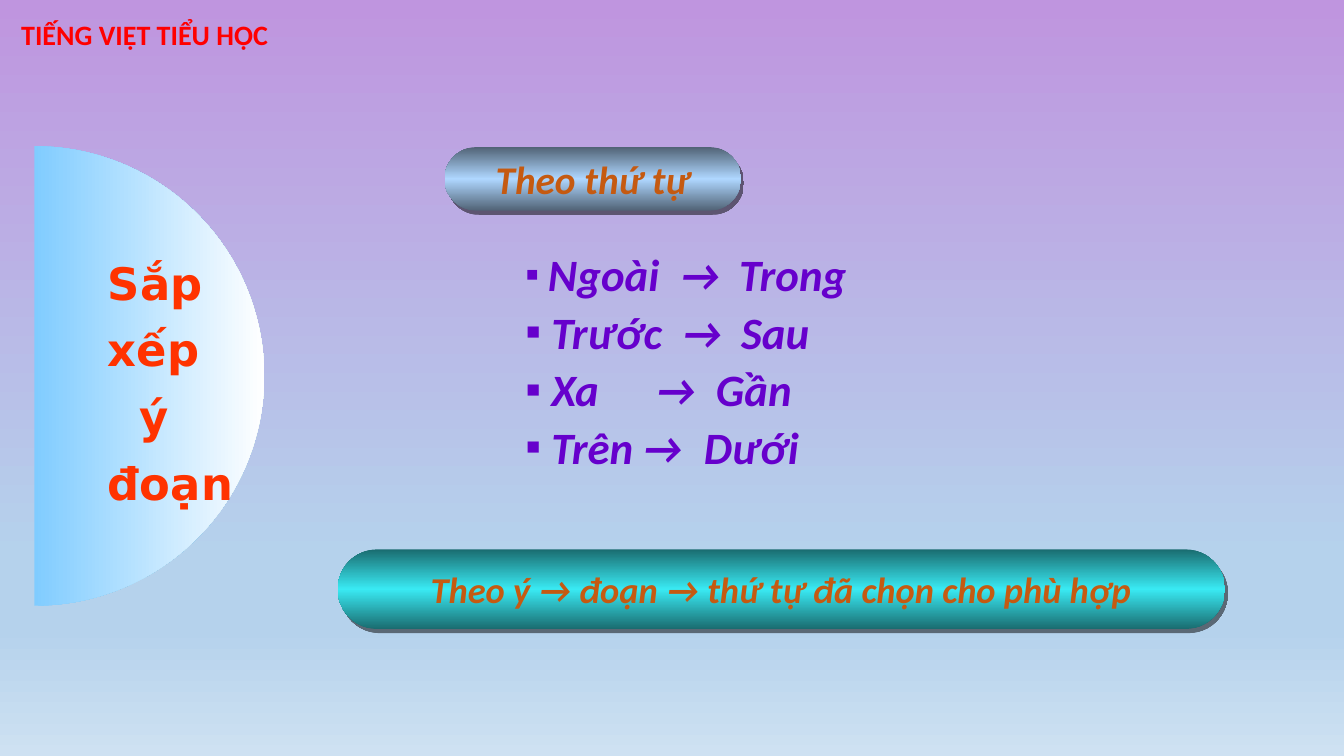
import math
from dataclasses import dataclass
from typing import Any

from lxml import etree
from pptx import Presentation
from pptx import util as u
from pptx.dml.color import RGBColor
from pptx.enum import shapes, text
from pptx.oxml.ns import qn

COLORS = {
    "title": "FF0000", "topic": "FF3300", "pill_text": "C55A11", "list": "6600CC",
    "sky": "80CCFF", "white": "FFFFFF", "shadow": "000000",
    "steel_edge": "516376", "steel_middle": "AFD7FF",
    "teal_edge": "1A6C70", "teal_middle": "39EAF3",
    "lilac": "BF95DF", "mist": "B5D2EC", "pale": "CEE1F2",
}
CELL = u.Inches(0.1)  # side of one grid column and row
DOWN, RIGHT = 270, 0  # gradient directions
BASE = {"name": "Calibri", "bold": True, "italic": False}
SLANTED = BASE | {"italic": True}


def cells(count: float) -> int:
    return round(count * CELL)


@dataclass
class Box:
    column: float
    row: float
    columns: float
    rows: float

    def frame(self) -> dict[str, int]:
        return {"left": cells(self.column), "top": cells(self.row),
                "width": cells(self.columns), "height": cells(self.rows)}


@dataclass
class Pill:
    box: Box
    edge: str
    middle: str
    size: int
    words: str


@dataclass
class Order:
    start: str
    end: str
    stops: tuple[float, float]  # grid columns of the arrow and of the end word
    lead_size: int = 32


PILLS = [
    Pill(Box(44.1, 14.6, 29.4, 6.3), "steel_edge", "steel_middle", 28, "Theo thứ tự"),
    Pill(Box(33.5, 54.5, 88, 7.9), "teal_edge", "teal_middle", 26,
         "Theo ý → đoạn → thứ tự đã chọn cho phù hợp"),
]
ORDERS = [
    Order("Ngoài", "Trong", (15.3, 21.2), 28),
    Order("Trước", "Sau", (15.5, 21.4)),
    Order("Xa", "Gần", (12.9, 18.9)),
    Order("Trên", "Dưới", (11.6, 17.7)),
]
TOPIC = [("Sắp", 0), ("xếp", 0), ("ý", 3.1), ("đoạn", 0)]


def apply(target: Any, values: dict[str, Any]) -> None:
    for name, value in values.items():
        setattr(target, name, value)


def add_run(paragraph: Any, words: str, size: int, color: str, style: dict[str, Any]) -> None:
    run = paragraph.add_run()
    run.text = words
    apply(run.font, style | {"size": u.Pt(size)})
    run.font.color.rgb = RGBColor.from_string(COLORS[color])


def paint_gradient(fill: Any, element: Any, angle: int, stops: list[tuple[int, str]]) -> None:
    fill.gradient()
    fill.gradient_angle = angle
    stop_list = element.find(".//" + qn("a:gsLst"))
    for old in list(stop_list):
        stop_list.remove(old)
    for percent, color in stops:
        stop = etree.SubElement(stop_list, qn("a:gs"), pos=str(percent * 1000))
        etree.SubElement(stop, qn("a:srgbClr"), val=COLORS[color])


def add_shadow(shape: Any) -> None:
    effects = shape.element.spPr.find(qn("a:effectLst"))
    shadow = etree.SubElement(effects, qn("a:outerShdw"), blurRad="0", dist=str(u.Pt(3.6)),
                              dir=str(56 * 60000), algn="ctr", rotWithShape="0")
    color = etree.SubElement(shadow, qn("a:srgbClr"), val=COLORS["shadow"])
    etree.SubElement(color, qn("a:alpha"), val="50000")


def fill_title(title: Any) -> None:
    apply(title, Box(1.1, 1.5, 28, 4.3).frame())
    apply(title.text_frame, {"word_wrap": True, "auto_size": text.MSO_AUTO_SIZE.NONE,
                             "vertical_anchor": text.MSO_ANCHOR.MIDDLE})
    paragraph = title.text_frame.paragraphs[0]
    apply(paragraph, {"alignment": text.PP_ALIGN.LEFT, "line_spacing": 0.9})
    add_run(paragraph, "TIẾNG VIỆT TIỂU HỌC", 20, "title", BASE)


def fill_list(body: Any) -> None:
    apply(body, Box(51.1, 24, 48.7, 24.2).frame())
    frame = body.text_frame
    apply(frame, {"word_wrap": True, "auto_size": text.MSO_AUTO_SIZE.NONE})
    for index, order in enumerate(ORDERS):
        paragraph = frame.add_paragraph() if index else frame.paragraphs[0]
        paragraph.space_before = u.Pt(2.6)
        add_run(paragraph, " ", order.lead_size, "list", SLANTED)
        add_run(paragraph, f"{order.start}\t→\t{order.end}", 32, "list", SLANTED)
        properties = paragraph._p.get_or_add_pPr()
        properties.set("marL", "0")
        properties.set("indent", "0")
        etree.SubElement(properties, qn("a:buChar"), char="▪")
        tabs = etree.SubElement(properties, qn("a:tabLst"))
        for stop in order.stops:
            etree.SubElement(tabs, qn("a:tab"), pos=str(cells(stop)), algn="l")


def add_half_disc(slide: Any) -> None:
    left, middle, radius, steps = 3.4, 37.3, 22.8, 90
    angles = [math.pi * (step / steps - 0.5) for step in range(steps + 1)]
    points = [(cells(left + radius * math.cos(angle)), cells(middle + radius * math.sin(angle)))
              for angle in angles]
    builder = slide.shapes.build_freeform(*points[0], scale=1.0)
    builder.add_line_segments(points[1:], close=True)
    shape = builder.convert_to_shape()
    shape.shadow.inherit = False
    shape.line.fill.background()
    paint_gradient(shape.fill, shape.element, RIGHT, [(0, "sky"), (100, "white")])
    frame = shape.text_frame
    apply(frame, {"word_wrap": True, "vertical_anchor": text.MSO_ANCHOR.MIDDLE,
                  "margin_left": cells(7.3), "margin_right": 0})
    for index, (word, indent) in enumerate(TOPIC):
        paragraph = frame.add_paragraph() if index else frame.paragraphs[0]
        apply(paragraph, {"alignment": text.PP_ALIGN.LEFT, "line_spacing": 1.24})
        paragraph._p.get_or_add_pPr().set("marL", str(cells(indent)))
        add_run(paragraph, word, 32, "topic", BASE | {"name": "DejaVu Sans"})


def add_pill(slide: Any, pill: Pill) -> None:
    shape = slide.shapes.add_shape(shapes.MSO_SHAPE.ROUNDED_RECTANGLE, **pill.box.frame())
    shape.adjustments[0] = 0.5
    shape.shadow.inherit = False
    shape.line.fill.background()
    paint_gradient(shape.fill, shape.element, DOWN,
                   [(0, pill.edge), (50, pill.middle), (100, pill.edge)])
    add_shadow(shape)
    apply(shape.text_frame, {"word_wrap": False, "vertical_anchor": text.MSO_ANCHOR.MIDDLE})
    paragraph = shape.text_frame.paragraphs[0]
    paragraph.alignment = text.PP_ALIGN.CENTER
    add_run(paragraph, pill.words, pill.size, "pill_text", SLANTED)


def main() -> None:
    presentation = Presentation()
    apply(presentation, {"slide_width": u.Inches(13.33), "slide_height": u.Inches(7.5)})
    slide = presentation.slides.add_slide(presentation.slide_layouts[1])

    # Background
    paint_gradient(slide.background.fill, slide.element, DOWN,
                   [(0, "lilac"), (74, "mist"), (83, "mist"), (100, "pale")])

    # Title and list
    fill_title(slide.shapes.title)
    fill_list(slide.placeholders[1])

    # Topic and its two rules
    add_half_disc(slide)
    for pill in PILLS:
        add_pill(slide, pill)

    presentation.save("out.pptx")


if __name__ == "__main__":
    main()
